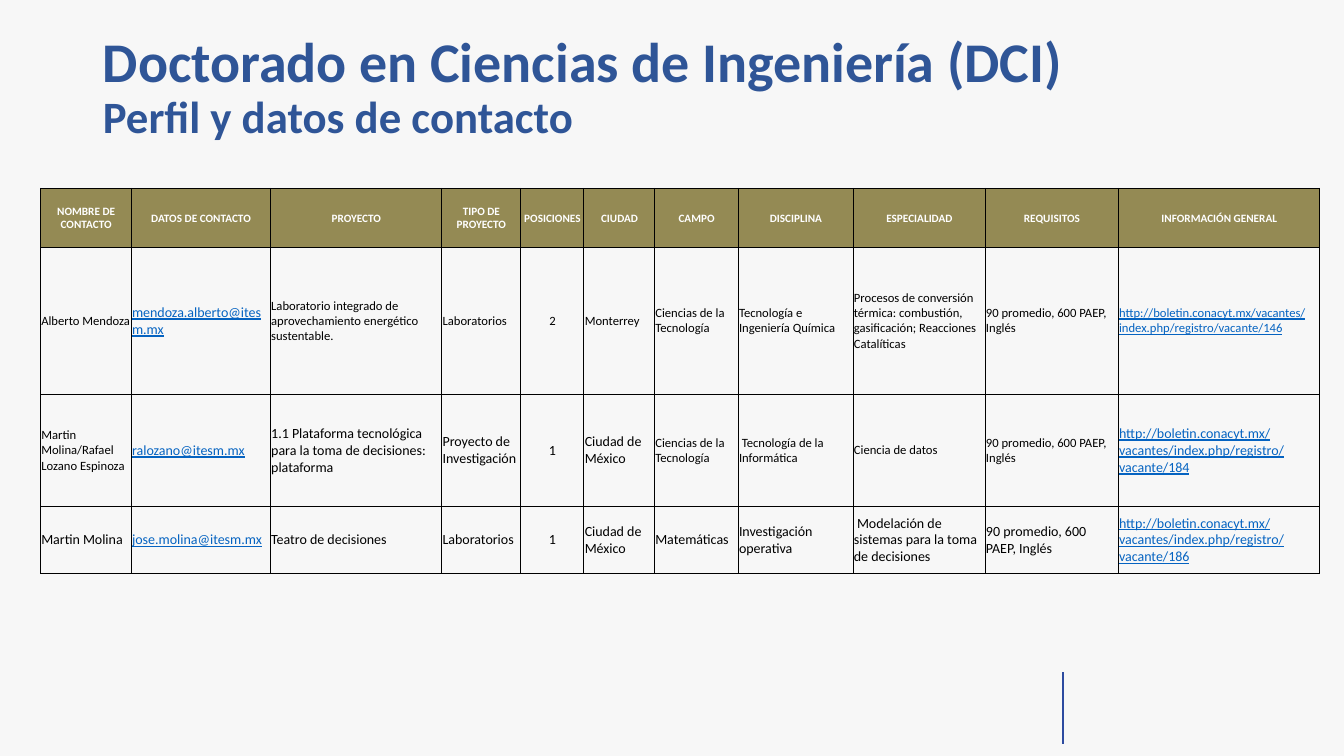
from dataclasses import dataclass

from lxml.etree import SubElement
from pptx import Presentation
from pptx.dml.color import RGBColor
from pptx.enum.shapes import MSO_CONNECTOR
from pptx.enum.text import MSO_ANCHOR, MSO_AUTO_SIZE, PP_ALIGN
from pptx.oxml.ns import qn
from pptx.slide import Slide
from pptx.table import _Cell
from pptx.util import Inches, Pt

FONT = "Calibri"
BLACK, WHITE, LINK_BLUE = "000000", "FFFFFF", "0563C1"
TITLE_BLUE, RULE_BLUE = "2F5597", "2D4BA0"
HEADER_OLIVE, PAGE_GREY = "948A54", "F7F7F7"
THIN, THICK = 0.5, 1


@dataclass(frozen=True)
class Column:
    heading: str
    width: float
    centred: bool = False
    link: bool = False


@dataclass(frozen=True)
class Vacancy:
    height: float
    texts: tuple[str, ...]
    sizes: tuple[int, ...]


@dataclass(frozen=True)
class TextStyle:
    size: int
    color: str
    bold: bool = False
    underline: bool = False
    centred: bool = False


COLUMNS = (
    Column("NOMBRE DE CONTACTO", 0.9),
    Column("DATOS DE CONTACTO", 1.38, link=True),
    Column("PROYECTO", 1.7),
    Column("TIPO DE PROYECTO", 0.78),
    Column("POSICIONES", 0.63, centred=True),
    Column("CIUDAD", 0.7),
    Column("CAMPO", 0.83),
    Column("DISCIPLINA", 1.14),
    Column("ESPECIALIDAD", 1.31),
    Column("REQUISITOS", 1.32),
    Column("INFORMACIÓN GENERAL", 2, link=True),
)
HEADER_HEIGHT = 0.58
REQUIREMENTS = "90 promedio, 600 PAEP, Inglés"
VACANCY_URL = "http://boletin.conacyt.mx/vacantes/index.php/registro/vacante/"
VACANCIES = (
    Vacancy(1.46, (
        "Alberto Mendoza", "mendoza.alberto@itesm.mx",
        "Laboratorio integrado de aprovechamiento energético sustentable.",
        "Laboratorios", "2", "Monterrey", "Ciencias de la Tecnología",
        "Tecnología e Ingeniería Química",
        "Procesos de conversión térmica: combustión, gasificación; "
        "Reacciones Catalíticas",
        REQUIREMENTS, VACANCY_URL + "146",
    ), (9, 10, 9, 9, 9, 9, 9, 9, 9, 9, 9)),
    Vacancy(1.11, (
        "Martin Molina/Rafael Lozano Espinoza", "ralozano@itesm.mx",
        "1.1 Plataforma tecnológica para la toma de decisiones: plataforma",
        "Proyecto de Investigación", "1", "Ciudad de México",
        "Ciencias de la Tecnología", " Tecnología de la Informática",
        "Ciencia de datos", REQUIREMENTS, VACANCY_URL + "184",
    ), (9, 10, 10, 10, 10, 10, 9, 9, 9, 9, 10)),
    Vacancy(0.67, (
        "Martin Molina", "jose.molina@itesm.mx", "Teatro de decisiones",
        "Laboratorios", "1", "Ciudad de México", "Matemáticas",
        "Investigación operativa",
        " Modelación de sistemas para la toma de decisiones",
        REQUIREMENTS, VACANCY_URL + "186",
    ), (10,) * len(COLUMNS)),
)


def rgb(color: str) -> RGBColor:
    return RGBColor.from_string(color)


def set_borders(cell: _Cell, left: float, right: float, top: float, bottom: float) -> None:
    """Draw black cell borders with widths in points."""
    properties = cell._tc.get_or_add_tcPr()
    for side, width in (("L", left), ("R", right), ("T", top), ("B", bottom)):
        line = SubElement(properties, qn(f"a:ln{side}"), w=str(Pt(width)))
        fill = SubElement(line, qn("a:solidFill"))
        SubElement(fill, qn("a:srgbClr"), val=BLACK)


def write_cell(cell: _Cell, text: str, style: TextStyle) -> None:
    cell.vertical_anchor = MSO_ANCHOR.MIDDLE
    cell.margin_left = cell.margin_top = Inches(0.01)
    cell.margin_right = cell.margin_bottom = 0
    paragraph = cell.text_frame.paragraphs[0]
    paragraph.text = text
    paragraph.alignment = PP_ALIGN.CENTER if style.centred else PP_ALIGN.LEFT
    font = paragraph.font
    font.name, font.size, font.bold = FONT, Pt(style.size), style.bold
    font.underline = style.underline
    font.color.rgb = rgb(style.color)


def add_title(slide: Slide) -> None:
    title = slide.shapes.title
    title.left, title.top = Inches(0.92), Inches(0.23)
    title.width, title.height = Inches(11.5), Inches(0.7)
    frame = title.text_frame
    frame.auto_size = MSO_AUTO_SIZE.NONE
    frame.word_wrap = True
    frame.vertical_anchor = MSO_ANCHOR.TOP
    frame.margin_top = Inches(0.11)
    frame.text = "Doctorado en Ciencias de Ingeniería (DCI)\nPerfil y datos de contacto"
    for paragraph, size in zip(frame.paragraphs, (40, 32)):
        paragraph.alignment = PP_ALIGN.LEFT
        paragraph.line_spacing = 0.9
        font = paragraph.font
        font.name, font.size, font.bold = FONT, Pt(size), True
        font.color.rgb = rgb(TITLE_BLUE)


def add_vacancy_table(slide: Slide) -> None:
    heights = [HEADER_HEIGHT, *(vacancy.height for vacancy in VACANCIES)]
    table = slide.shapes.add_table(
        len(heights), len(COLUMNS), Inches(0.4), Inches(1.87),
        Inches(sum(column.width for column in COLUMNS)), Inches(sum(heights)),
    ).table
    table.first_row = table.horz_banding = False
    for row, height in zip(table.rows, heights):
        row.height = Inches(height)

    last_column = len(COLUMNS) - 1
    for column_index, column in enumerate(COLUMNS):
        table.columns[column_index].width = Inches(column.width)
        header = table.cell(0, column_index)
        write_cell(header, column.heading, TextStyle(8, WHITE, bold=True, centred=True))
        set_borders(header, THIN, THIN, THICK, THIN)
        header.fill.solid()
        header.fill.fore_color.rgb = rgb(HEADER_OLIVE)

        for row_index, vacancy in enumerate(VACANCIES, start=1):
            cell = table.cell(row_index, column_index)
            style = TextStyle(
                vacancy.sizes[column_index], LINK_BLUE if column.link else BLACK,
                underline=column.link, centred=column.centred,
            )
            write_cell(cell, vacancy.texts[column_index], style)
            outer_right = column_index == last_column and row_index > 1
            set_borders(
                cell, THIN, THICK if outer_right else THIN,
                THICK if row_index == 2 else THIN,
                THIN if row_index == 2 else THICK,
            )
            cell.fill.background()


def add_footer_rule(slide: Slide) -> None:
    rule = slide.shapes.add_connector(
        MSO_CONNECTOR.STRAIGHT, Inches(10.54), Inches(6.67), Inches(10.54), Inches(7.38)
    )
    rule.line.color.rgb = rgb(RULE_BLUE)
    rule.line.width = Pt(1.5)
    SubElement(rule._element.spPr, qn("a:effectLst"))


def main() -> None:
    presentation = Presentation()
    presentation.slide_width, presentation.slide_height = Inches(13.33), Inches(7.5)
    slide = presentation.slides.add_slide(presentation.slide_layouts[5])
    slide.background.fill.solid()
    slide.background.fill.fore_color.rgb = rgb(PAGE_GREY)
    add_footer_rule(slide)
    add_vacancy_table(slide)
    add_title(slide)
    presentation.save("out.pptx")


if __name__ == "__main__":
    main()
